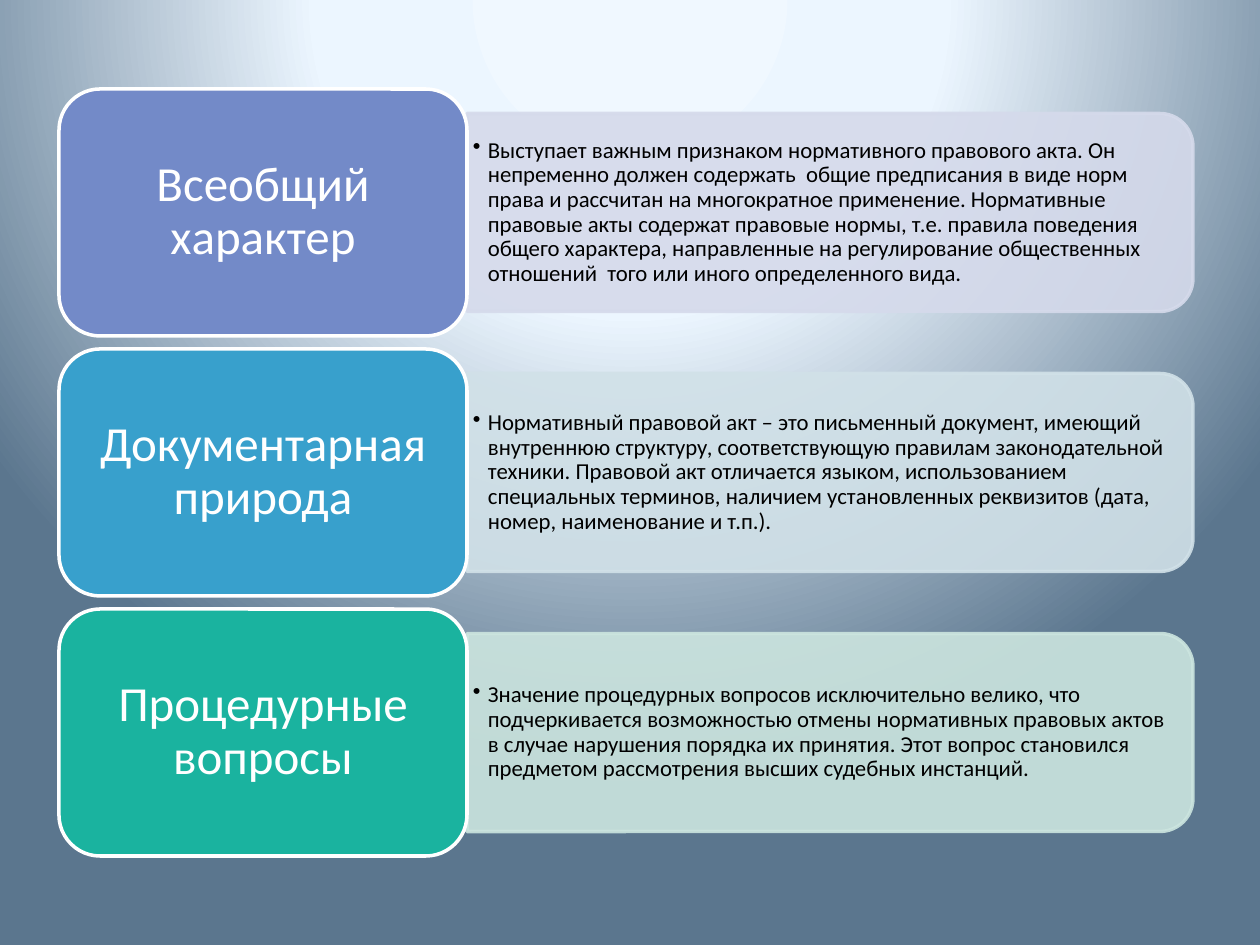
from dataclasses import dataclass

from lxml.etree import SubElement
from pptx import Presentation
from pptx.dml.color import RGBColor
from pptx.enum.shapes import MSO_SHAPE
from pptx.enum.text import MSO_ANCHOR, PP_ALIGN
from pptx.oxml import parse_xml
from pptx.oxml.ns import nsdecls, qn
from pptx.util import Emu, Pt

FEATURES = [
    ("Всеобщий характер",
     "Выступает важным признаком нормативного правового акта. Он непременно должен содержать  общие предписания "
     "в виде норм права и рассчитан на многократное применение. Нормативные правовые акты содержат правовые нормы, "
     "т.е. правила поведения общего характера, направленные на регулирование общественных отношений  того или иного "
     "определенного вида."),
    ("Документарная природа",
     "Нормативный правовой акт – это письменный документ, имеющий внутреннюю структуру, соответствующую правилам "
     "законодательной техники. Правовой акт отличается языком, использованием специальных терминов, наличием "
     "установленных реквизитов (дата, номер, наименование и т.п.)."),
    ("Процедурные вопросы",
     "Значение процедурных вопросов исключительно велико, что подчеркивается возможностью отмены нормативных "
     "правовых актов в случае нарушения порядка их принятия. Этот вопрос становился предметом рассмотрения высших "
     "судебных инстанций."),
]


@dataclass(frozen=True)
class Theme:
    font: str = "Calibri"
    heading_size: int = 28
    body_size: int = 13
    line_width: int = 2
    heading_color: str = "FFFFFF"
    body_color: str = "000000"
    card_colors: tuple = ("738AC8", "38A0CC", "1AB39F")
    panel_colors: tuple = ("D5DAEB", "D1E1E8", "CCE5DF")
    panel_opacity: int = 90
    background: tuple = ((0, "F0F8FF"), (40, "ECF6FF"), (100, "5B768E"))


THEME = Theme()
SLIDE_WIDTH, SLIDE_HEIGHT = 1260, 945
CARD_LEFT, CARD_TOP, CARD_WIDTH, CARD_HEIGHT = 59, 89, 408, 247
ROW_PITCH = 260
PANEL_WIDTH, PANEL_HEIGHT = 726, 198
BODY_WIDTH, BODY_HEIGHT = 716, 179
BULLET_INDENT = 15


def px(length):
    return Emu(round(length * 914400 / 126))


def set_background(slide):
    slide.background.fill.solid()
    properties = slide.element.find(".//" + qn("p:bgPr"))
    stops = "".join(f'<a:gs pos="{position * 1000}"><a:srgbClr val="{color}"/></a:gs>'
                    for position, color in THEME.background)
    gradient = parse_xml(
        f'<a:gradFill {nsdecls("a")} rotWithShape="1"><a:gsLst>{stops}</a:gsLst><a:path path="circle">'
        '<a:fillToRect l="50000" t="-80000" r="50000" b="180000"/></a:path></a:gradFill>')
    properties.replace(properties.find(qn("a:solidFill")), gradient)


def add_block(slide, kind, left, top, width, height, fill, line):
    shape = slide.shapes.add_shape(kind, px(left), px(top), px(width), px(height))
    shape.shadow.inherit = False
    shape.fill.solid()
    shape.fill.fore_color.rgb = RGBColor.from_string(fill)
    shape.line.color.rgb = RGBColor.from_string(line)
    shape.line.width = Pt(THEME.line_width)
    return shape


def write_text(shape, text, size, color, margins, alignment, space_after):
    frame = shape.text_frame
    frame.word_wrap = True
    frame.vertical_anchor = MSO_ANCHOR.MIDDLE
    frame.margin_left = frame.margin_right = px(margins[0])
    frame.margin_top = frame.margin_bottom = px(margins[1])
    frame.text = text
    paragraph = frame.paragraphs[0]
    paragraph.alignment = alignment
    paragraph.line_spacing = 0.9
    paragraph.space_after = Pt(space_after)
    font = paragraph.runs[0].font
    font.name = THEME.font
    font.size = Pt(size)
    font.color.rgb = RGBColor.from_string(color)
    return paragraph


def add_panel(slide, middle, color):
    center = CARD_LEFT + CARD_WIDTH + PANEL_WIDTH / 2
    panel = add_block(slide, MSO_SHAPE.ROUND_2_SAME_RECTANGLE, center - PANEL_HEIGHT / 2,
                      middle - PANEL_WIDTH / 2, PANEL_HEIGHT, PANEL_WIDTH, color, color)
    panel.rotation = 90
    for color_element in panel.element.spPr.iter(qn("a:srgbClr")):
        SubElement(color_element, qn("a:alpha"), val=str(THEME.panel_opacity * 1000))


def add_body(slide, middle, text):
    box = slide.shapes.add_textbox(px(CARD_LEFT + CARD_WIDTH), px(middle - BODY_HEIGHT / 2),
                                   px(BODY_WIDTH), px(BODY_HEIGHT))
    paragraph = write_text(box, text, THEME.body_size, THEME.body_color, (6, 4), PP_ALIGN.LEFT, 2)
    properties = paragraph._p.get_or_add_pPr()
    properties.set("marL", str(px(BULLET_INDENT)))
    properties.set("indent", str(-px(BULLET_INDENT)))
    SubElement(properties, qn("a:buChar"), char="•")


def add_card(slide, top, text, color):
    card = add_block(slide, MSO_SHAPE.ROUNDED_RECTANGLE, CARD_LEFT, top, CARD_WIDTH, CARD_HEIGHT,
                     color, THEME.heading_color)
    write_text(card, text, THEME.heading_size, THEME.heading_color, (15, 8), PP_ALIGN.CENTER, 10)


def main():
    presentation = Presentation()
    presentation.slide_width = px(SLIDE_WIDTH)
    presentation.slide_height = px(SLIDE_HEIGHT)
    slide = presentation.slides.add_slide(presentation.slide_layouts[6])
    set_background(slide)
    rows = zip(FEATURES, THEME.card_colors, THEME.panel_colors)
    for index, ((heading, body), card_color, panel_color) in enumerate(rows):
        top = CARD_TOP + index * ROW_PITCH
        middle = top + CARD_HEIGHT / 2
        add_panel(slide, middle, panel_color)
        add_body(slide, middle, body)
        add_card(slide, top, heading, card_color)
    presentation.save("out.pptx")


if __name__ == "__main__":
    main()
